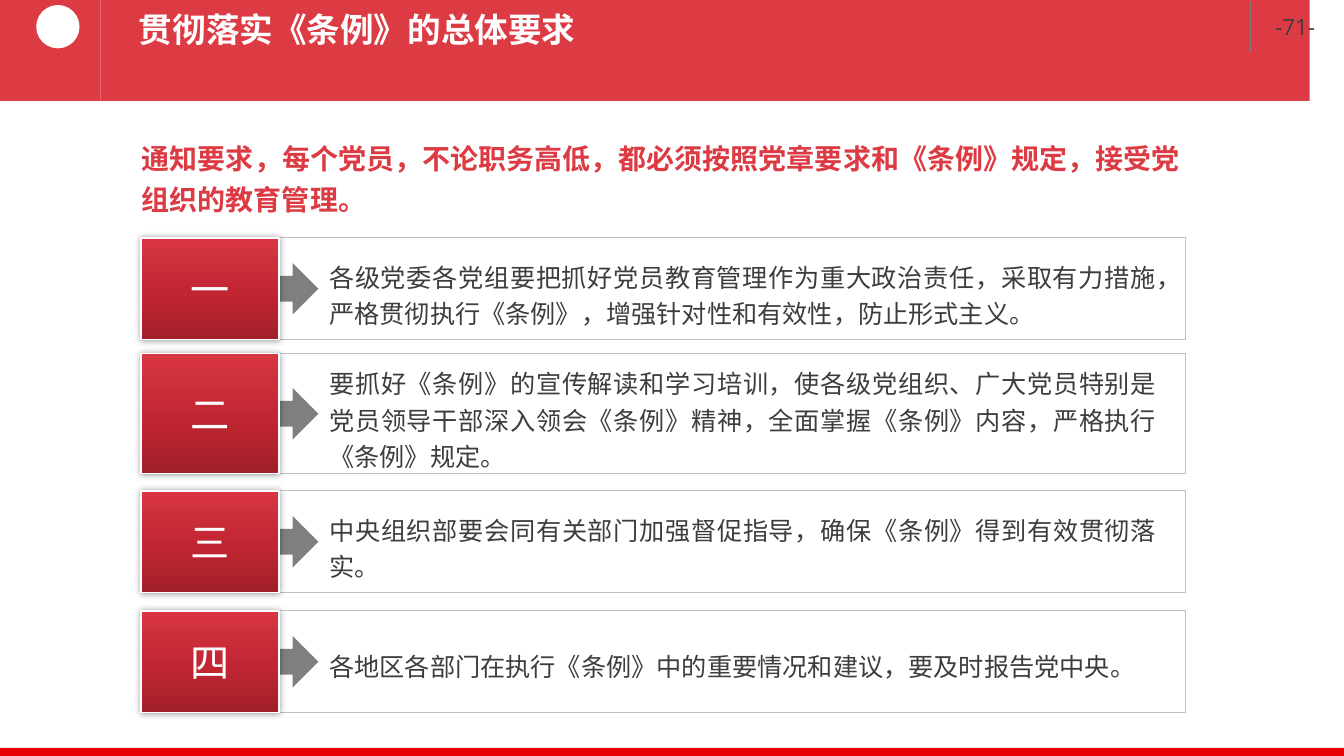
import math
from dataclasses import dataclass

from lxml import etree
from pptx import Presentation
from pptx import util as u
from pptx.dml import color
from pptx.enum import shapes, text
from pptx.oxml import ns

RED, GREY, WHITE, INK = "DD3B44", "7F7F7F", "FFFFFF", "3D3D3D"
CJK = "Noto Sans CJK SC"
BADGE_STOPS = [(0, "D73542"), (53, "C22632"), (100, "A11F2A")]
SLIDE_WIDTH = 13.34
Shape = shapes.MSO_SHAPE
Align = text.PP_ALIGN


@dataclass
class Requirement:
    numeral: str
    top: float
    height: float
    text_top: float
    text_height: float
    wording: str


REQUIREMENTS = [
    Requirement("一", 2.36, 1.01, 2.49, 0.8,
                "各级党委各党组要把抓好党员教育管理作为重大政治责任，采取有力措施，"
                "严格贯彻执行《条例》，增强针对性和有效性，防止形式主义。"),
    Requirement("二", 3.51, 1.19, 3.55, 1.16,
                "要抓好《条例》的宣传解读和学习培训，使各级党组织、广大党员特别是党员领导干部"
                "深入领会《条例》精神，全面掌握《条例》内容，严格执行《条例》规定。"),
    Requirement("三", 4.87, 1.01, 5, 0.8,
                "中央组织部要会同有关部门加强督促指导，确保《条例》得到有效贯彻落实。"),
    Requirement("四", 6.06, 1.01, 6.35, 0.43,
                "各地区各部门在执行《条例》中的重要情况和建议，要及时报告党中央。"),
]


def rgb(value: str) -> color.RGBColor:
    return color.RGBColor.from_string(value)


def paint(shape, fill: str | None, line: str | None = None, width: float = 0.75) -> None:
    """Set fill and outline, and switch the theme shadow off."""
    shape.shadow.inherit = False
    if fill:
        shape.fill.solid()
        shape.fill.fore_color.rgb = rgb(fill)
    if line:
        shape.line.color.rgb = rgb(line)
        shape.line.width = u.Pt(width)
    else:
        shape.line.fill.background()


def add_block(page, kind, left: float, top: float, width: float, height: float,
              fill: str | None, line: str | None = None, line_width: float = 0.75):
    block = page.shapes.add_shape(kind, u.Inches(left), u.Inches(top),
                                  u.Inches(width), u.Inches(height))
    paint(block, fill, line, line_width)
    return block


def write(shape, wording: str, size: float, ink: str, font: str = CJK,
          bold: bool = False, align=None):
    para = shape.text_frame.paragraphs[0]
    para.text = wording
    para.alignment = align
    para.font.size = u.Pt(size)
    para.font.bold = bold
    para.font.color.rgb = rgb(ink)
    para.font.name = font
    latin = para._p.pPr.find(".//" + ns.qn("a:latin"))
    east_asian = etree.Element(ns.qn("a:ea"), typeface=CJK)
    latin.addnext(east_asian)
    return para


def add_text(page, left: float, top: float, width: float, height: float,
             wording: str, size: float, ink: str, font: str = CJK,
             bold: bool = False, align=None, wrap: bool = True):
    box = page.shapes.add_textbox(u.Inches(left), u.Inches(top),
                                  u.Inches(width), u.Inches(height))
    box.text_frame.word_wrap = wrap
    return box, write(box, wording, size, ink, font, bold, align)


def add_panel(page, square_x: float, round_x: float) -> None:
    """Header panel with square corners at square_x and rounded ones at round_x."""
    top, bottom, radius = -0.03, 0.62, 0.04
    side = 1 if round_x > square_x else -1
    angles = [math.radians(step * 15) for step in range(7)]
    lower = [(round_x - side * radius * (1 - math.sin(a)),
              bottom - radius * (1 - math.cos(a))) for a in angles]
    upper = [(x, top + bottom - y) for x, y in reversed(lower)]
    builder = page.shapes.build_freeform(square_x, top, scale=u.Inches(1))
    builder.add_line_segments([(square_x, bottom), *lower, *upper], close=True)
    paint(builder.convert_to_shape(), RED)


def add_divider(page, x: float, top: float, bottom: float) -> None:
    line = page.shapes.add_connector(shapes.MSO_CONNECTOR.STRAIGHT, u.Inches(x),
                                     u.Inches(top), u.Inches(x), u.Inches(bottom))
    line.line.color.rgb = rgb(GREY)
    line.line.width = u.Pt(0.75)
    etree.SubElement(line._element.spPr, ns.qn("a:effectLst"))


def shade_badge(badge) -> None:
    """Give the badge its vertical gradient and soft shadow."""
    badge.fill.gradient()
    badge.fill.gradient_angle = 270
    properties = badge._element.spPr
    stops = properties.find(".//" + ns.qn("a:gsLst"))
    for stop in list(stops):
        stops.remove(stop)
    for position, value in BADGE_STOPS:
        stop = etree.SubElement(stops, ns.qn("a:gs"), pos=str(position * 1000))
        etree.SubElement(stop, ns.qn("a:srgbClr"), val=value)
    shadow = etree.SubElement(properties.find(ns.qn("a:effectLst")), ns.qn("a:outerShdw"),
                              blurRad=str(u.Pt(5)), dist="0", dir="0",
                              algn="ctr", rotWithShape="0")
    tint = etree.SubElement(shadow, ns.qn("a:srgbClr"), val="000000")
    etree.SubElement(tint, ns.qn("a:alpha"), val="40000")


def add_requirement(page, item: Requirement) -> None:
    add_block(page, Shape.RECTANGLE, 2.72, item.top, 9.05, item.height, WHITE, "BFBFBF")
    arrow_height = 0.51
    add_block(page, Shape.RIGHT_ARROW, 2.53, item.top + (item.height - arrow_height) / 2,
              0.63, arrow_height, GREY)
    badge = add_block(page, Shape.RECTANGLE, 1.4, item.top, 1.37, item.height,
                      None, WHITE, 1)
    shade_badge(badge)
    frame = badge.text_frame
    frame.margin_left = frame.margin_right = frame.margin_top = frame.margin_bottom = 0
    frame.vertical_anchor = text.MSO_ANCHOR.MIDDLE
    write(badge, item.numeral, 28, WHITE, align=Align.CENTER)
    _, para = add_text(page, 3.17, item.text_top, 8.41, item.text_height,
                       item.wording, 18, INK, align=Align.JUSTIFY)
    para.line_spacing = 1.2


def add_header(page) -> None:
    add_panel(page, 0, 1.14)
    add_panel(page, SLIDE_WIDTH, 1.22)
    add_text(page, 12.56, 0.08, 0.64, 0.37, "-71-", 16, INK, font="Open Sans", wrap=False)
    add_divider(page, 12.41, 0.02, 0.52)
    add_block(page, Shape.OVAL, 0.36, 0.05, 0.43, 0.43, WHITE)
    title, _ = add_text(page, 1.28, 0.01, 9.02, 0.55, "贯彻落实《条例》的总体要求",
                        24, WHITE, font="Arial", bold=True)
    title.text_frame.vertical_anchor = text.MSO_ANCHOR.MIDDLE


def main() -> None:
    deck = Presentation()
    deck.slide_width, deck.slide_height = u.Inches(SLIDE_WIDTH), u.Inches(7.5)
    page = deck.slides.add_slide(deck.slide_layouts[6])
    add_header(page)
    add_block(page, Shape.RECTANGLE, 0, 7.42, SLIDE_WIDTH, 0.08, "E60000")
    _, notice = add_text(
        page, 1.31, 1.29, 10.5, 0.87,
        "通知要求，每个党员，不论职务高低，都必须按照党章要求和《条例》规定，接受党组织的教育管理。",
        20, RED, bold=True, align=Align.JUSTIFY)
    notice.line_spacing = 1.2
    notice.space_after = u.Pt(2)
    for item in REQUIREMENTS:
        add_requirement(page, item)
    deck.save("out.pptx")


if __name__ == "__main__":
    main()
